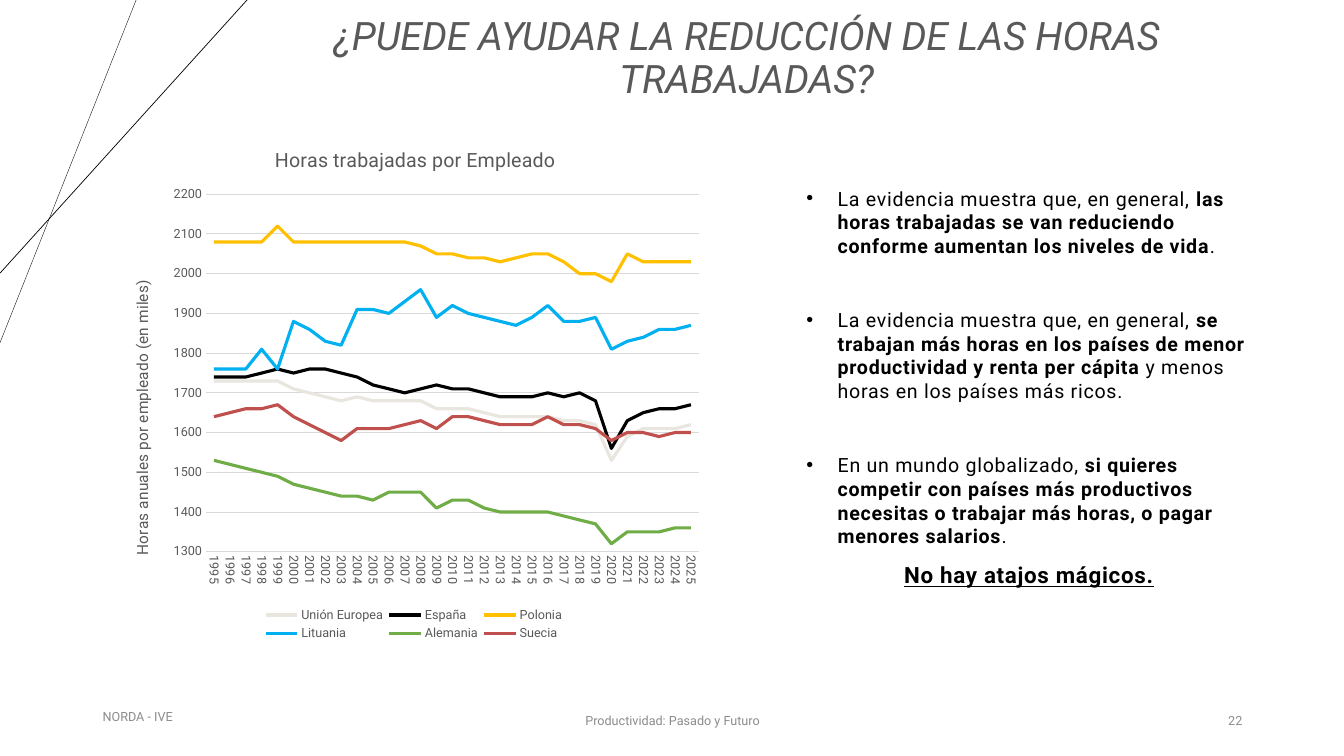
import pptx
import pptx.chart.data
import pptx.dml.color
import pptx.enum.chart
import pptx.enum.shapes
import pptx.enum.text
import pptx.oxml
import pptx.oxml.ns
import pptx.util
from pptx.util import Inches

RGB = pptx.dml.color.RGBColor.from_string
ALIGN = pptx.enum.text.PP_ALIGN
MIDDLE = pptx.enum.text.MSO_ANCHOR.MIDDLE
FONT = "Roboto"
COLORS = {
    "text": "000000", "heading": "595959", "footer": "8C8C8C", "grid": "D9D9D9",
    "Unión Europea": "E9E6DF", "España": "000000", "Polonia": "FFC000",
    "Lituania": "00B0F0", "Alemania": "70AD47", "Suecia": "C0504D",
}


def style(font, size, color):
    font.name, font.size, font.color.rgb = FONT, pptx.util.Pt(size), RGB(COLORS[color])


def place(element, x, y, w=None, h=None, inner=False):
    """Give a chart part a manual layout, in fractions of the chart."""
    qn = pptx.oxml.ns.qn
    parts = [("layoutTarget", "inner")] if inner else []
    parts += [("xMode", "edge"), ("yMode", "edge"), ("x", x), ("y", y)]
    parts += [("w", w), ("h", h)] if w else []
    body = "".join(f'<c:{name} val="{value}"/>' for name, value in parts)
    layout = pptx.oxml.parse_xml(
        f'<c:layout {pptx.oxml.ns.nsdecls("c")}><c:manualLayout>{body}</c:manualLayout></c:layout>')
    old = element.find(qn("c:layout"))
    overlay = element.find(qn("c:overlay"))
    if old is not None:
        element.replace(old, layout)
    elif overlay is not None:
        overlay.addprevious(layout)
    else:
        element.insert(0, layout)


prs = pptx.Presentation()
prs.slide_width, prs.slide_height = Inches(13.33), Inches(7.5)
s = prs.slides.add_slide(prs.slide_layouts[6])

# Corner lines
for top_x, left_y, width in [(1.35, 3.4, 0.25), (2.45, 2.71, 0.5)]:
    line = s.shapes.add_connector(
        pptx.enum.shapes.MSO_CONNECTOR.STRAIGHT, Inches(top_x), 0, 0, Inches(left_y))
    line.line.color.rgb = RGB(COLORS["text"])
    line.line.width = pptx.util.Pt(width)
    line._element.spPr.append(
        pptx.oxml.parse_xml(f'<a:effectLst {pptx.oxml.ns.nsdecls("a")}/>'))

# Title and footers
for text, x, y, w, h, size, color, align in [
    ("¿PUEDE AYUDAR LA REDUCCIÓN DE LAS HORAS TRABAJADAS?",
     2.21, 0.09, 10.39, 1, 28, "heading", ALIGN.CENTER),
    ("NORDA - IVE", 0.92, 6.91, 3, 0.4, 9, "footer", ALIGN.LEFT),
    ("Productividad: Pasado y Futuro", 4.42, 6.95, 4.5, 0.4, 9, "footer", ALIGN.CENTER),
    ("22", 9.42, 6.95, 3, 0.4, 9, "footer", ALIGN.RIGHT),
]:
    tf = s.shapes.add_textbox(Inches(x), Inches(y), Inches(w), Inches(h)).text_frame
    tf.word_wrap = True
    tf.vertical_anchor = MIDDLE
    tf.text = text
    p = tf.paragraphs[0]
    p.alignment = align
    style(p.runs[0].font, size, color)
    if color == "heading":
        p.line_spacing = 0.9
        p.runs[0].font.italic = True

# Hours worked, 1995 to 2025
hours = {
    "Unión Europea": [
        1730, 1730, 1730, 1730, 1730, 1710, 1700, 1690, 1680, 1690, 1680, 1680, 1680, 1680, 1660, 1660,
        1660, 1650, 1640, 1640, 1640, 1640, 1630, 1630, 1620, 1530, 1590, 1610, 1610, 1610, 1620],
    "España": [
        1740, 1740, 1740, 1750, 1760, 1750, 1760, 1760, 1750, 1740, 1720, 1710, 1700, 1710, 1720, 1710,
        1710, 1700, 1690, 1690, 1690, 1700, 1690, 1700, 1680, 1560, 1630, 1650, 1660, 1660, 1670],
    "Polonia": [
        2080, 2080, 2080, 2080, 2120, 2080, 2080, 2080, 2080, 2080, 2080, 2080, 2080, 2070, 2050, 2050,
        2040, 2040, 2030, 2040, 2050, 2050, 2030, 2000, 2000, 1980, 2050, 2030, 2030, 2030, 2030],
    "Lituania": [
        1760, 1760, 1760, 1810, 1760, 1880, 1860, 1830, 1820, 1910, 1910, 1900, 1930, 1960, 1890, 1920,
        1900, 1890, 1880, 1870, 1890, 1920, 1880, 1880, 1890, 1810, 1830, 1840, 1860, 1860, 1870],
    "Alemania": [
        1530, 1520, 1510, 1500, 1490, 1470, 1460, 1450, 1440, 1440, 1430, 1450, 1450, 1450, 1410, 1430,
        1430, 1410, 1400, 1400, 1400, 1400, 1390, 1380, 1370, 1320, 1350, 1350, 1350, 1360, 1360],
    "Suecia": [
        1640, 1650, 1660, 1660, 1670, 1640, 1620, 1600, 1580, 1610, 1610, 1610, 1620, 1630, 1610, 1640,
        1640, 1630, 1620, 1620, 1620, 1640, 1620, 1620, 1610, 1580, 1600, 1600, 1590, 1600, 1600],
}
data = pptx.chart.data.CategoryChartData(number_format="0")
data.categories = [str(year) for year in range(1995, 2026)]
for country, values in hours.items():
    data.add_series(country, values)
chart = s.shapes.add_chart(
    pptx.enum.chart.XL_CHART_TYPE.LINE,
    Inches(1.16), Inches(1.26), Inches(5.89), Inches(5.14), data).chart
style(chart.font, 10, "text")
chart.plots[0].vary_by_categories = False
for series in chart.plots[0].series:
    series.smooth = False
    series.format.line.color.rgb = RGB(COLORS[series.name])
    series.format.line.width = pptx.util.Pt(2.25)

years, scale = chart.category_axis, chart.value_axis
scale.minimum_scale, scale.maximum_scale, scale.major_unit = 1300, 2200, 100
scale.tick_labels.number_format = "0"
scale.tick_labels.number_format_is_linked = False
for axis in (years, scale):
    axis.major_tick_mark = axis.minor_tick_mark = pptx.enum.chart.XL_TICK_MARK.NONE
    style(axis.tick_labels.font, 9, "heading")
years.tick_labels.font._element.getparent().getparent().getparent().find(
    pptx.oxml.ns.qn("a:bodyPr")).set("rot", "5400000")
for line in (years.format.line, scale.major_gridlines.format.line):
    line.color.rgb = RGB(COLORS["grid"])
    line.width = pptx.util.Pt(0.75)
scale.format.line.fill.background()

for title, text, size, x, y in [
    (chart.chart_title, "Horas trabajadas por Empleado", 14, 0.26, 0.03),
    (scale.axis_title, "Horas anuales por empleado (en miles)", 11, 0.02, 0.29),
]:
    title.text_frame.text = text
    r = title.text_frame.paragraphs[0].runs[0]
    style(r.font, size, "heading")
    r.font.bold = False
    place(title._element, x, y)
scale.axis_title.text_frame._txBody.bodyPr.set("rot", "-5400000")

chart.has_legend = True
chart.legend.position = pptx.enum.chart.XL_LEGEND_POSITION.BOTTOM
chart.legend.include_in_layout = False
style(chart.legend.font, 9, "heading")
place(chart.legend._element, 0.24, 0.92, 0.52, 0.08)
place(chart._chartSpace.chart.plotArea, 0.15, 0.13, 0.83, 0.69, inner=True)

# Conclusions: plain start, bold message, plain end
points = [
    ("La evidencia muestra que, en general, ",
     "las horas trabajadas se van reduciendo conforme aumentan los niveles de vida", "."),
    ("La evidencia muestra que, en general, ",
     "se trabajan más horas en los países de menor productividad y renta per cápita",
     " y menos horas en los países más ricos."),
    ("En un mundo globalizado, ",
     "si quieres competir con países más productivos necesitas o trabajar más horas, "
     "o pagar menores salarios", "."),
]
tf = s.shapes.add_textbox(Inches(7.9), Inches(1.8), Inches(4.61), Inches(4.18)).text_frame
tf.word_wrap = True
for i, point in enumerate(points):
    p = tf.add_paragraph() if i else tf.paragraphs[0]
    p.space_before = pptx.util.Pt(36.5 if i else 10)
    pPr = p._p.get_or_add_pPr()
    pPr.set("marL", str(Inches(0.31)))
    pPr.set("indent", str(-Inches(0.31)))
    for bullet in ('buFont {} typeface="Arial"', 'buChar {} char="•"'):
        pPr.append(pptx.oxml.parse_xml(f'<a:{bullet.format(pptx.oxml.ns.nsdecls("a"))}/>'))
    for part, text in enumerate(point):
        r = p.add_run()
        r.text = text
        style(r.font, 14, "text")
        r.font.bold = part == 1
p = tf.add_paragraph()
p.text = "No hay atajos mágicos."
p.alignment = ALIGN.CENTER
p.space_before = pptx.util.Pt(10)
style(p.runs[0].font, 16, "text")
p.runs[0].font.bold = p.runs[0].font.underline = True
for p in tf.paragraphs:
    for r in p.runs:
        r.font._element.set("spc", "50")

prs.save("out.pptx")
